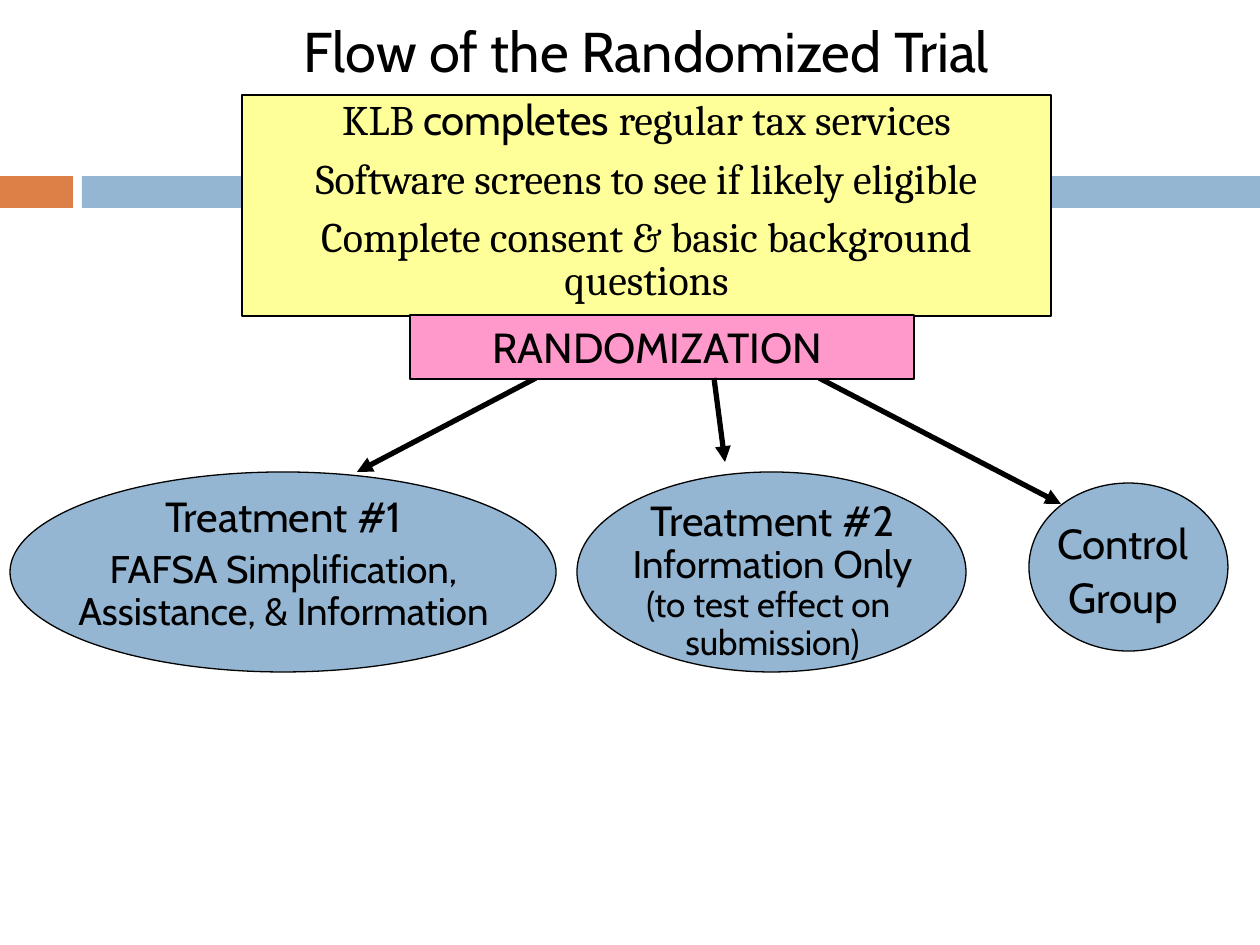
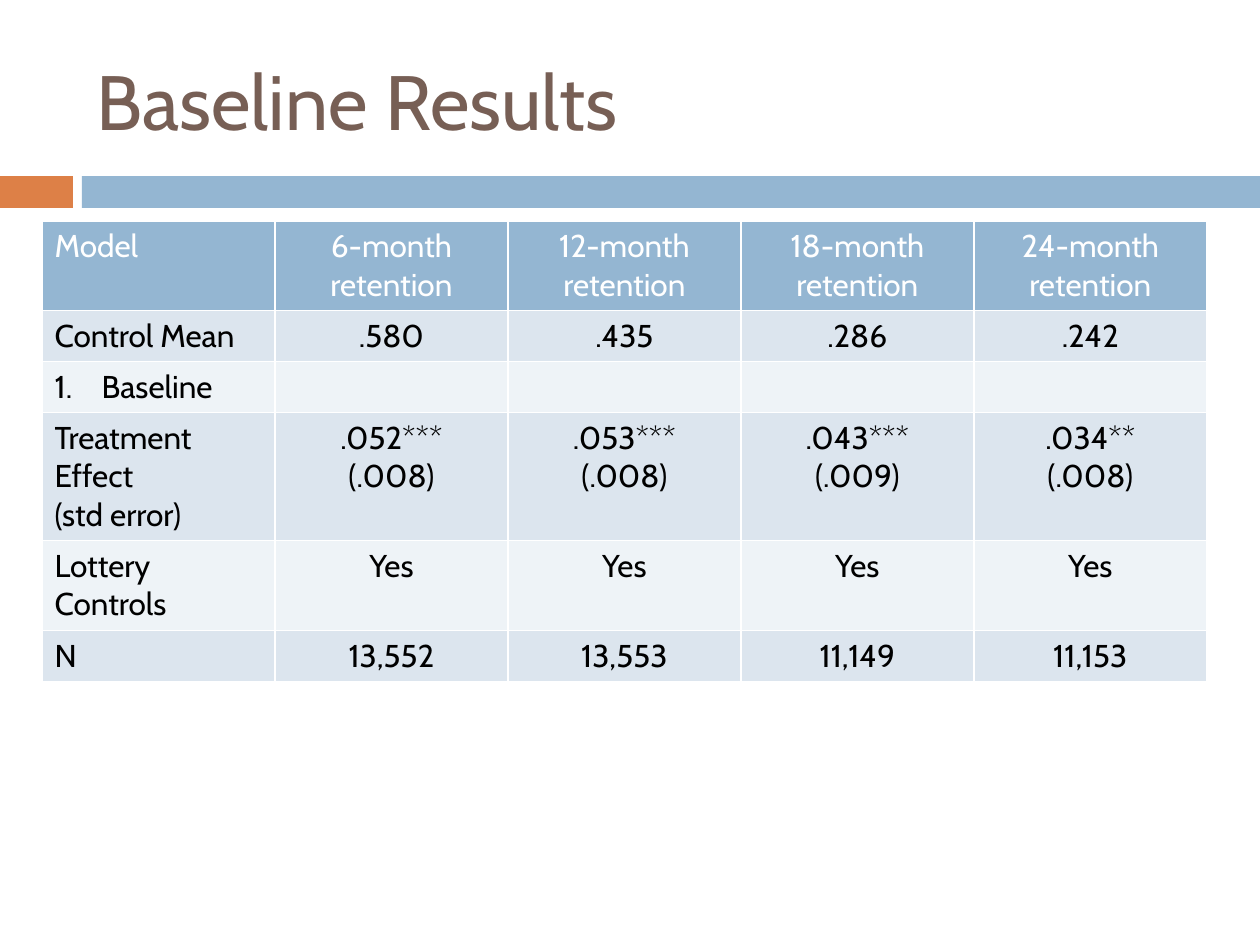
from lxml.etree import SubElement
from pptx import Presentation
from pptx.dml.color import RGBColor
from pptx.enum.shapes import MSO_CONNECTOR as Connector, MSO_SHAPE as Preset
from pptx.enum.text import MSO_ANCHOR as Anchor, MSO_AUTO_SIZE as AutoSize, PP_ALIGN as Align
from pptx.oxml.ns import qn
from pptx.util import Emu, Pt

PX_PER_INCH = 126
SLIDE_WIDTH, SLIDE_HEIGHT = 1260, 945
TITLE_ONLY = 5
BODY_FONT, SERIF_FONT = "Cabin", "Cambria"
COLORS = {
    "orange": "DD8047",
    "blue": "94B6D2",
    "brown": "775F55",
    "yellow": "FFFF99",
    "pink": "FF99CC",
    "black": "000000",
    "white": "FFFFFF",
    "row_dark": "DCE5EE",
    "row_light": "EEF3F7",
}

RESULTS = [
    ["Model"] + [f"{months}-month retention" for months in (6, 12, 18, 24)],
    ["Control Mean", ".580", ".435", ".286", ".242"],
    ["Baseline", "", "", "", ""],
    ["Treatment Effect\n(std error)", ".052***\n(.008)", ".053***\n(.008)",
     ".043***\n(.009)", ".034**\n(.008)"],
    ["Lottery Controls"] + ["Yes"] * 4,
    ["N", "13,552", "13,553", "11,149", "11,153"],
]


def px(length):
    return Emu(round(length * 914400 / PX_PER_INCH))


def box(*lengths):
    return [px(length) for length in lengths]


def rgb(name):
    return RGBColor.from_string(COLORS[name])


def write_text(frame, paragraphs, size=24, font=BODY_FONT, color="black", align=Align.CENTER,
               anchor=Anchor.TOP, line_spacing=None, space_before=0):
    frame.word_wrap = True
    frame.auto_size = AutoSize.NONE
    frame.vertical_anchor = anchor
    for index, runs in enumerate(paragraphs):
        paragraph = frame.add_paragraph() if index else frame.paragraphs[0]
        paragraph.alignment = align
        paragraph.line_spacing = line_spacing
        paragraph.space_before = Pt(space_before)
        for text, changes in [(runs, {})] if isinstance(runs, str) else runs:
            run = paragraph.add_run()
            run.text = text
            run.font.size = Pt(changes.get("size", size))
            run.font.name = changes.get("font", font)
            run.font.bold = False
            run.font.color.rgb = rgb(color)


def add_block(slide, preset, place, fill, outlined=True):
    shape = slide.shapes.add_shape(preset, *box(*place))
    shape.shadow.inherit = False
    shape.fill.solid()
    shape.fill.fore_color.rgb = rgb(fill)
    if outlined:
        shape.line.color.rgb = rgb("black")
        shape.line.width = Pt(0.75)
    else:
        shape.line.fill.background()
    return shape


def add_label(slide, place, paragraphs, **text_format):
    label = slide.shapes.add_textbox(*box(*place))
    write_text(label.text_frame, paragraphs, line_spacing=0.9, **text_format)


def add_arrow(slide, start, end):
    arrow = slide.shapes.add_connector(Connector.STRAIGHT, *box(*start, *end))
    arrow.line.color.rgb = rgb("black")
    arrow.line.width = Pt(3)
    SubElement(arrow.line._get_or_add_ln(), qn("a:tailEnd"), type="triangle")
    SubElement(arrow._element.spPr, qn("a:effectLst"))


def add_titled_slide(presentation, title, place, **text_format):
    slide = presentation.slides.add_slide(presentation.slide_layouts[TITLE_ONLY])
    heading = slide.shapes.title
    heading.left, heading.top, heading.width, heading.height = box(*place)
    write_text(heading.text_frame, [title], **text_format)
    add_block(slide, Preset.RECTANGLE, (0, 176, 73, 32), "orange", outlined=False)
    add_block(slide, Preset.RECTANGLE, (82, 176, SLIDE_WIDTH - 82, 32), "blue", outlined=False)
    return slide


def number_paragraph(paragraph):
    properties = paragraph._p.get_or_add_pPr()
    properties.set("marL", str(px(47)))
    properties.set("indent", str(-px(47)))
    SubElement(properties, qn("a:buFont"), typeface="+mj-lt")
    SubElement(properties, qn("a:buAutoNum"), type="arabicPeriod")


def add_results_table(slide, rows, left, top, column_width, row_height):
    column_count = len(rows[0])
    table = slide.shapes.add_table(
        len(rows), column_count,
        *box(left, top, column_width * column_count, row_height * len(rows))).table
    for row_index, row in enumerate(rows):
        header = row_index == 0
        fill = "blue" if header else "row_dark" if row_index % 2 else "row_light"
        for column_index, text in enumerate(row):
            cell = table.cell(row_index, column_index)
            cell.fill.solid()
            cell.fill.fore_color.rgb = rgb(fill)
            if text:
                write_text(cell.text_frame, text.split("\n"), size=18,
                           color="white" if header else "black",
                           align=Align.CENTER if column_index else Align.LEFT)
    return table


def build_trial_flow(presentation):
    slide = add_titled_slide(presentation, "Flow of the Randomized Trial",
                             (179, 10, 935, 79), size=32)
    intake = add_block(slide, Preset.RECTANGLE, (242, 95, 809, 221), "yellow")
    write_text(intake.text_frame, [
        [("KLB ", {}), ("completes", {"font": BODY_FONT}), (" regular tax services", {})],
        "Software screens to see if likely eligible",
        "Complete consent & basic background questions",
    ], font=SERIF_FONT, line_spacing=0.85, space_before=9)

    for place in [(10, 472, 546, 200), (577, 472, 389, 200), (1029, 483, 199, 168)]:
        add_block(slide, Preset.OVAL, place, "blue")
    add_label(slide, (21, 490, 525, 151), [
        "Treatment #1",
        [("FAFSA Simplification, Assistance, & Information", {"size": 22})],
    ], space_before=5)
    add_label(slide, (557, 494, 431, 175), [
        "Treatment #2",
        [("Information Only", {"size": 22})],
        [("(to test effect on ", {"size": 20})],
        [("submission)", {"size": 20})],
    ])
    add_label(slide, (1018, 517, 210, 115), ["Control", "Group"], space_before=5)

    add_arrow(slide, (536, 378), (357, 472))
    add_arrow(slide, (819, 378), (1061, 504))
    randomization = add_block(slide, Preset.RECTANGLE, (410, 315, 504, 64), "pink")
    write_text(randomization.text_frame, ["RANDOMIZATION "])
    add_arrow(slide, (714, 378), (725, 462))


def build_baseline_results(presentation):
    slide = add_titled_slide(presentation, "Baseline Results", (84, 32, 1124, 136),
                             size=44, color="brown", align=Align.LEFT, anchor=Anchor.MIDDLE)
    table = add_results_table(slide, RESULTS, left=42, top=221, column_width=233, row_height=51)
    number_paragraph(table.cell(2, 0).text_frame.paragraphs[0])


def main():
    presentation = Presentation()
    presentation.slide_width, presentation.slide_height = box(SLIDE_WIDTH, SLIDE_HEIGHT)
    build_trial_flow(presentation)
    build_baseline_results(presentation)
    presentation.save("out.pptx")


if __name__ == "__main__":
    main()
